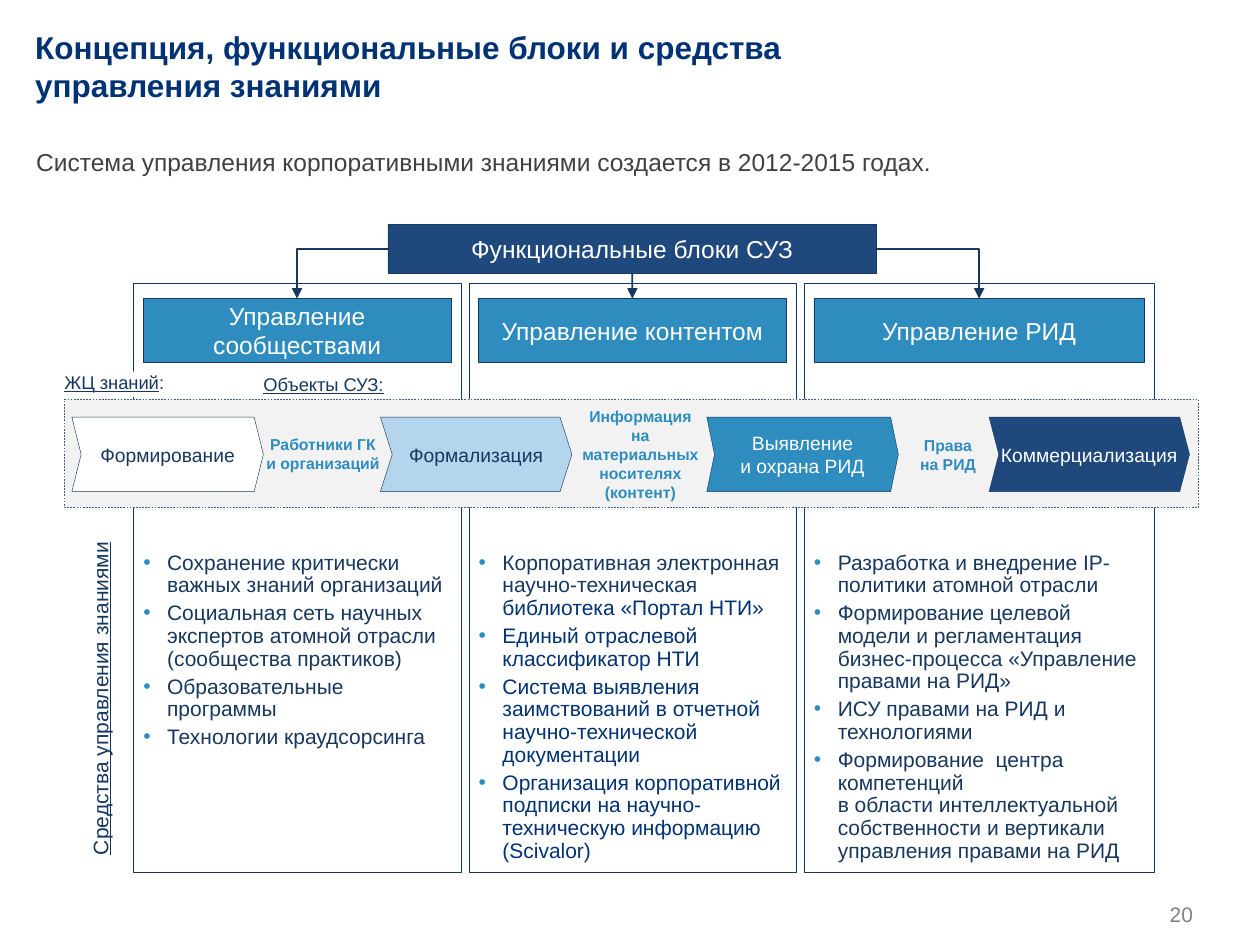
from lxml import etree
from pptx import Presentation
from pptx.dml.color import RGBColor
from pptx.enum.dml import MSO_LINE
from pptx.enum.shapes import MSO_CONNECTOR, MSO_SHAPE
from pptx.enum.text import MSO_ANCHOR, PP_ALIGN
from pptx.oxml.ns import qn
from pptx.util import Cm, Pt

RECTANGLE, CHEVRON = MSO_SHAPE.RECTANGLE, MSO_SHAPE.CHEVRON
STRAIGHT, ELBOW = MSO_CONNECTOR.STRAIGHT, MSO_CONNECTOR.ELBOW
TOP, MIDDLE = MSO_ANCHOR.TOP, MSO_ANCHOR.MIDDLE
LEFT, CENTER = PP_ALIGN.LEFT, PP_ALIGN.CENTER
DASH = MSO_LINE.DASH

WHITE = RGBColor(0xFF, 0xFF, 0xFF)
NAVY = RGBColor(0x00, 0x32, 0x74)
INK = RGBColor(0x17, 0x37, 0x5E)
DARK_BLUE = RGBColor(0x1F, 0x49, 0x7D)
BLUE = RGBColor(0x2E, 0x8D, 0xBE)
PALE_BLUE = RGBColor(0xB5, 0xD5, 0xED)
BAND_FILL = RGBColor(0xF2, 0xF2, 0xF2)
BAND_LINE = RGBColor(0x3A, 0x5F, 0x8C)
TEXT_GRAY = RGBColor(0x41, 0x41, 0x42)
PAGE_GRAY = RGBColor(0x81, 0x82, 0x86)

presentation = Presentation()
presentation.slide_width, presentation.slide_height = Cm(25.4), Cm(19.05)
slide = presentation.slides.add_slide(presentation.slide_layouts[6])


def add_box(left, top, width, height, kind=None, fill=None, line=None):
    """Add a preset shape, or a text box when no kind is given."""
    frame = Cm(left), Cm(top), Cm(width), Cm(height)
    if kind is None:
        return slide.shapes.add_textbox(*frame)
    shape = slide.shapes.add_shape(kind, *frame)
    shape.shadow.inherit = False
    if fill is None:
        shape.fill.background()
    else:
        shape.fill.solid()
        shape.fill.fore_color.rgb = fill
    if line is None:
        shape.line.fill.background()
    else:
        shape.line.color.rgb = line
        shape.line.width = Pt(0.25)
    return shape


def write(shape, lines, size, color, align=LEFT, anchor=TOP, insets=(0, 0, 0, 0),
          wrap=True, bold=None, underline=None):
    """Fill a shape with one paragraph per line; insets run left, top, right, bottom."""
    frame = shape.text_frame
    frame.word_wrap = wrap
    frame.vertical_anchor = anchor
    (frame.margin_left, frame.margin_top,
     frame.margin_right, frame.margin_bottom) = [Cm(inset) for inset in insets]
    frame.text = "\n".join(lines)
    for paragraph in frame.paragraphs:
        paragraph.alignment = align
        font = paragraph.font
        font.name, font.size, font.color.rgb = "Arial", Pt(size), color
        font.bold, font.underline = bold, underline
    return frame.paragraphs


# Title, subtitle and page number
write(add_box(0.71, 0, 18.85, 2.67),
      ["Концепция, функциональные блоки и средства управления знаниями"],
      18, NAVY, anchor=MIDDLE, bold=True)
write(add_box(0.48, 2.84, 24.41, 0.86),
      ["Cистема управления корпоративными знаниями создается в 2012-2015 годах."],
      14, TEXT_GRAY, insets=(0.25, 0.13, 0.25, 0.13))
write(add_box(22.94, 17.91, 1.75, 1.04), ["20"], 12, PAGE_GRAY, CENTER, MIDDLE)

tools_label = add_box(-1.12, 13.44, 6.68, 0.91)
tools_label.rotation = 270
write(tools_label, ["Средства управления знаниями"], 12, INK, underline=True)

# Functional blocks: one column each, joined to the main block
main_block = add_box(7.82, 4.52, 9.85, 0.99, RECTANGLE, DARK_BLUE, INK)
write(main_block, ["Функциональные блоки СУЗ"], 14, WHITE, CENTER, MIDDLE)

COLUMN_LEFT, COLUMN_STEP, HEADER_INSET = 2.69, 6.76, 0.2
# width, header, side of the main block, bullet colour, bullets
columns = [
    (6.6, "Управление сообществами", 1, INK, [
        "Сохранение критически важных знаний организаций",
        "Социальная сеть научных экспертов атомной отрасли (сообщества практиков)",
        "Образовательные программы",
        "Технологии краудсорсинга"]),
    (6.6, "Управление контентом", 2, NAVY, [
        "Корпоративная электронная научно-техническая ",
        "Единый отраслевой классификатор НТИ",
        "Система выявления заимствований в отчетной научно-технической документации",
        "Организация корпоративной подписки на научно-техническую информацию (Scivalor)"]),
    (7.06, "Управление РИД", 3, INK, [
        "Разработка и внедрение IP-политики атомной отрасли",
        "Формирование целевой модели и регламентация бизнес-процесса "
        "«Управление правами на РИД»",
        "ИСУ правами на РИД и технологиями",
        "Формирование  центра компетенций\vв области интеллектуальной "
        "собственности и вертикали управления правами на РИД"]),
]
for index, (width, header, side, color, bullets) in enumerate(columns):
    left = COLUMN_LEFT + index * COLUMN_STEP
    column = add_box(left, 5.72, width, 11.86, RECTANGLE, line=INK)
    paragraphs = write(column, bullets, 12, color, insets=(0.2, 5.41, 0.1, 0.13))
    for paragraph in paragraphs:
        paragraph.line_spacing, paragraph.space_after = 0.9, Pt(3)
        properties = paragraph._p.get_or_add_pPr()
        properties.set("marL", str(Cm(0.48)))
        properties.set("indent", str(-Cm(0.48)))
        bullet_color = etree.Element(qn("a:buClr"))
        etree.SubElement(bullet_color, qn("a:srgbClr"), val=str(BLUE))
        bullet_font = etree.Element(qn("a:buFont"), typeface="Arial")
        bullet = etree.Element(qn("a:buChar"), char="•")
        default_font = properties.find(qn("a:defRPr"))
        for element in (bullet_color, bullet_font, bullet):
            default_font.addprevious(element)
    if index == 1:
        library = paragraphs[0]
        library.runs[0].font.color.rgb = INK
        library.add_run().text = "библиотека «Портал НТИ»"

    header_box = add_box(left + HEADER_INSET, 6.02, width - 2 * HEADER_INSET, 1.28,
                         RECTANGLE, BLUE, INK)
    write(header_box, [header], 14, WHITE, CENTER, MIDDLE)

    connector = slide.shapes.add_connector(STRAIGHT if side == 2 else ELBOW, 0, 0, 0, 0)
    connector.begin_connect(main_block, side)
    connector.end_connect(header_box, 0)
    connector.line.color.rgb = INK
    connector.line.width = Pt(1)
    connector_properties = connector._element.spPr
    if side != 2:
        connector_properties.find(qn("a:prstGeom")).set("prst", "bentConnector2")
    etree.SubElement(connector.line._get_or_add_ln(), qn("a:tailEnd"), type="triangle")
    etree.SubElement(connector_properties, qn("a:effectLst"))

# Knowledge life cycle band
band = add_box(1.3, 8.05, 22.86, 2.18, RECTANGLE, BAND_FILL, BAND_LINE)
band.line.dash_style = DASH

stages = [
    (1.45, 3.86, 0.124, WHITE, INK, ["Формирование"]),
    (7.67, 3.86, 0.159, PALE_BLUE, INK, ["Формализация"]),
    (14.25, 3.86, 0.103, BLUE, WHITE, ["Выявление", "и охрана РИД"]),
    (19.94, 4.04, 0.131, DARK_BLUE, WHITE, ["Коммерциализация"]),
]
for left, width, point, fill, color, lines in stages:
    stage = add_box(left, 8.41, width, 1.5, CHEVRON, fill, INK)
    stage.adjustments[0] = point
    write(stage, lines, 11, color, CENTER, MIDDLE, wrap=False)

BAND_MIDDLE = 9.15
knowledge_objects = [
    (5.33, 2.36, 0.76, ["Работники ГК", "и организаций"]),
    (11.68, 2.46, 1.9, ["Информация на", "материальных носителях", "(контент)"]),
    (17.93, 2.36, 0.74, ["Права", "на РИД"]),
]
for left, width, height, lines in knowledge_objects:
    label = add_box(left, BAND_MIDDLE - height / 2, width, height)
    write(label, lines, 9, BLUE, CENTER, bold=True)

write(add_box(5.31, 7.52, 2.49, 0.51), ["Объекты СУЗ:"], 10.5, INK, underline=True)
cycle_label = add_box(1.3, 7.49, 2.06, 0.51, RECTANGLE, WHITE)
cycle_text = write(cycle_label, ["ЖЦ знаний"], 10.5, INK, underline=True)[0]
colon = cycle_text.add_run()
colon.text = ":"
colon.font.underline = False

presentation.save("out.pptx")
